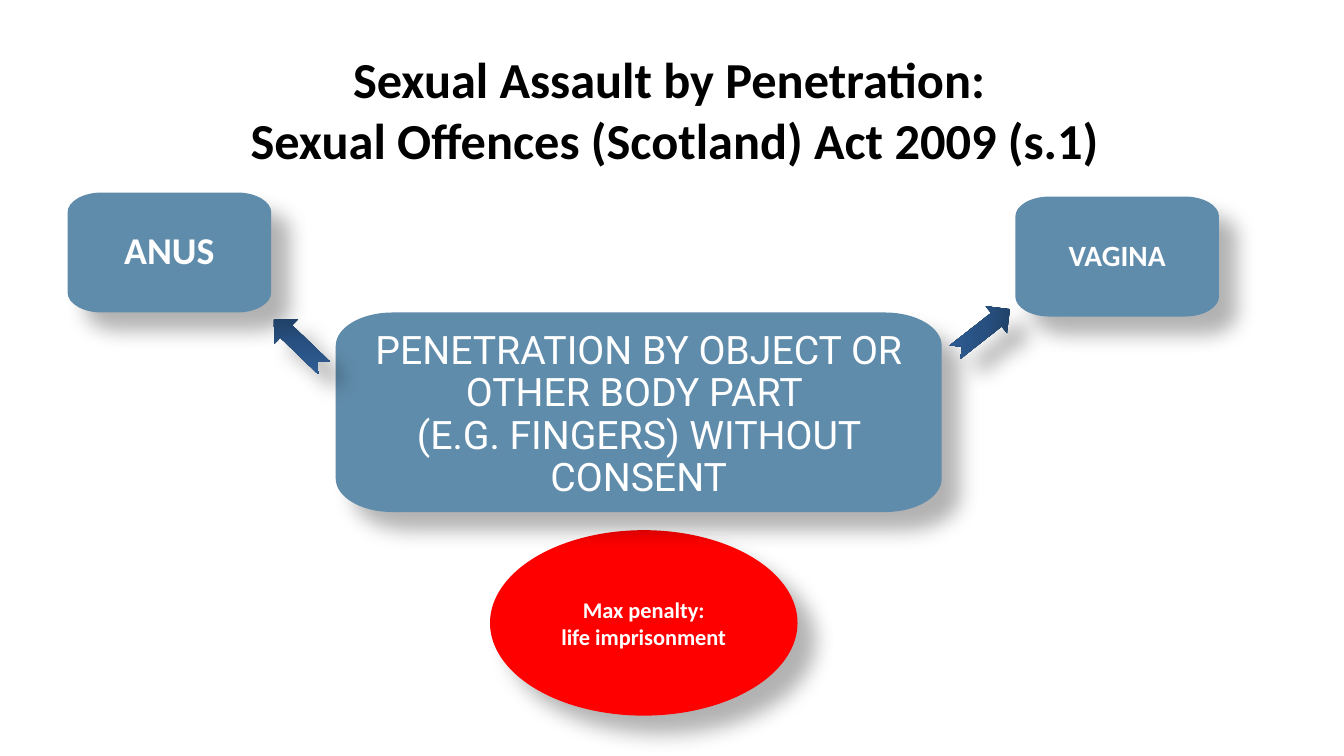
import copy

import lxml.etree
import pptx
import pptx.dml.color
import pptx.enum.shapes
import pptx.enum.text
import pptx.oxml
import pptx.oxml.ns
import pptx.util

Inches = pptx.util.Inches
RGBColor = pptx.dml.color.RGBColor
SHAPE = pptx.enum.shapes.MSO_SHAPE
ANCHOR = pptx.enum.text.MSO_ANCHOR
qn = pptx.oxml.ns.qn

BLACK = RGBColor(0x00, 0x00, 0x00)
WHITE = RGBColor(0xFF, 0xFF, 0xFF)
RED = RGBColor(0xFF, 0x00, 0x00)
STEEL = RGBColor(0x60, 0x8C, 0xAB)
NAVY_STOPS = (RGBColor(0x1C, 0x39, 0x5B), RGBColor(0x28, 0x51, 0x81),
              RGBColor(0x30, 0x60, 0x99))
ROUNDNESS = 0.55  # pull of a curve towards its corner

SHADOW = (
    '<a:outerShdw %s blurRad="190500" dist="228600" dir="2700000" algn="tl" '
    'rotWithShape="0"><a:srgbClr val="000000"><a:alpha val="30000"/>'
    '</a:srgbClr></a:outerShdw>' % pptx.oxml.ns.nsdecls("a"))


def write_text(shape, lines, size, font="Calibri", color=WHITE, bold=True,
               spacing=1.0, inset=None, drop=0, anchor=ANCHOR.MIDDLE):
    """Write one centred paragraph per line; drop lowers the text."""
    tf = shape.text_frame
    tf.word_wrap = True
    tf.auto_size = pptx.enum.text.MSO_AUTO_SIZE.NONE
    tf.vertical_anchor = anchor
    if inset is not None:
        tf.margin_left = tf.margin_right = tf.margin_bottom = Inches(inset)
        tf.margin_top = Inches(inset + 2 * drop)
    for i, line in enumerate(lines):
        p = tf.add_paragraph() if i else tf.paragraphs[0]
        p.text = line
        p.alignment = pptx.enum.text.PP_ALIGN.CENTER
        p.line_spacing = spacing
        for r in p.runs:
            r.font.name = font
            r.font.size = pptx.util.Pt(size)
            r.font.bold = bold
            r.font.color.rgb = color


def round_corners(sp):
    """Turn every other side of an eight-sided outline into a curve."""
    outline = next(sp._element.iter(qn("a:path")))
    points = [(int(pt.get("x")), int(pt.get("y")))
              for pt in outline.iter(qn("a:pt"))]
    sides = outline.findall(qn("a:lnTo"))
    for i in range(0, 8, 2):
        start, end = points[i], points[i + 1]
        corner = (start[0], end[1]) if i % 4 == 0 else (end[0], start[1])
        pulled = [tuple(round(a + ROUNDNESS * (c - a))
                        for a, c in zip(tip, corner)) for tip in (start, end)]
        curve = lxml.etree.Element(qn("a:cubicBezTo"))
        for x, y in pulled + [end]:
            lxml.etree.SubElement(curve, qn("a:pt"), x=str(x), y=str(y))
        outline.replace(sides[i], curve)


class Deck:
    """Holds the slide and its shared look."""

    def __init__(self):
        self.prs = pptx.Presentation()
        self.prs.slide_width = Inches(13.33)
        self.prs.slide_height = Inches(7.5)
        self.s = self.prs.slides.add_slide(self.prs.slide_layouts[5])

    def finish(self, sp, fill=None):
        """Remove the outline, fill the shape and give it the soft shadow."""
        if fill is not None:
            sp.fill.solid()
            sp.fill.fore_color.rgb = fill
        sp.line.fill.background()
        sp.shadow.inherit = False
        effects = sp._element.spPr.find(qn("a:effectLst"))
        effects.append(pptx.oxml.parse_xml(SHADOW))

    def title(self, lines, x, y, w, h):
        sp = self.s.shapes.title
        sp.left, sp.top, sp.width, sp.height = map(Inches, (x, y, w, h))
        write_text(sp, lines, 36, color=BLACK, anchor=ANCHOR.TOP)

    def ellipse(self, lines, x, y, w, h, size):
        sp = self.s.shapes.add_shape(SHAPE.OVAL, *map(Inches, (x, y, w, h)))
        self.finish(sp, RED)
        write_text(sp, lines, size)

    def soft_box(self, lines, x, y, w, h, size, **text_format):
        """Box whose corners are quarter ellipses, wider than tall."""
        ry = h / 6
        rx = 1.7 * ry
        right, bottom = x + w, y + h
        points = [(Inches(px), Inches(py)) for px, py in (
            (x, y + ry), (x + rx, y), (right - rx, y), (right, y + ry),
            (right, bottom - ry), (right - rx, bottom),
            (x + rx, bottom), (x, bottom - ry))]
        builder = self.s.shapes.build_freeform(*points[0])
        builder.add_line_segments(points[1:] + points[:1], close=True)
        sp = builder.convert_to_shape()
        round_corners(sp)
        self.finish(sp, STEEL)
        write_text(sp, lines, size, spacing=0.9, **text_format)

    def arrow(self, x, y, rotation):
        sp = self.s.shapes.add_shape(SHAPE.NOTCHED_RIGHT_ARROW, Inches(x),
                                     Inches(y), Inches(0.69), Inches(0.34))
        sp.rotation = rotation
        sp.fill.gradient()
        sp.fill.gradient_angle = 135
        stops = sp._element.spPr.find(qn("a:gradFill")).find(qn("a:gsLst"))
        stops.insert(1, copy.deepcopy(stops[0]))
        for i, stop in enumerate(sp.fill.gradient_stops):
            stop.position = i / 2
            stop.color.rgb = NAVY_STOPS[i]
        self.finish(sp)


def main():
    deck = Deck()

    # Heading
    deck.title(["Sexual Assault by Penetration: ",
                "Sexual Offences (Scotland) Act 2009 (s.1)"],
               0.53, 0.43, 12.33, 1.31)

    # Penalty
    deck.ellipse(["Max penalty:", "life imprisonment"],
                 4.86, 5.26, 3.05, 1.84, 16)

    # Offence and its two elements
    deck.soft_box(["VAGINA"], 10.07, 1.95, 2.02, 1.19, 21, inset=0.12)
    deck.soft_box(["ANUS"], 0.67, 1.91, 2.02, 1.19, 27, inset=0.13)
    deck.soft_box(["PENETRATION BY OBJECT OR OTHER BODY PART \v"
                   "(E.G. FINGERS) WITHOUT CONSENT"],
                  3.33, 3.1, 6.01, 1.98, 28, inset=0.17, drop=0.03,
                  font="Roboto", bold=False)

    # Arrows outwards from the offence
    deck.arrow(2.62, 3.24, 223.9)
    deck.arrow(9.4, 3.11, 321.9)

    deck.prs.save("out.pptx")


if __name__ == "__main__":
    main()
